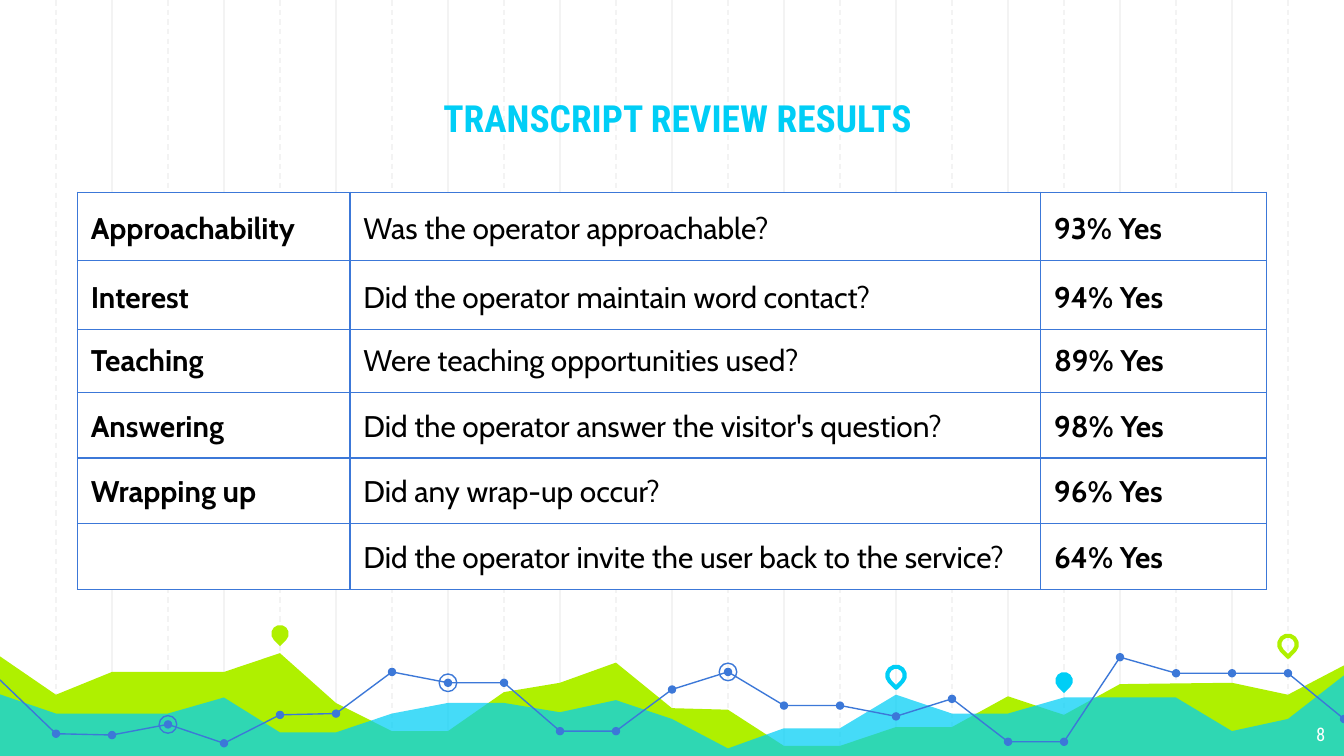
"""Build the transcript review results slide."""
import lxml.etree
import pptx
import pptx.dml.color
import pptx.enum.dml
import pptx.enum.shapes
import pptx.enum.text
import pptx.oxml.ns
import pptx.util

Pt = pptx.util.Pt
qn = pptx.oxml.ns.qn
KIND = pptx.enum.shapes.MSO_SHAPE
ALIGN = pptx.enum.text.PP_ALIGN
ANCHOR = pptx.enum.text.MSO_ANCHOR

LIME, CYAN, BLUE = "AFF000", "00CEF6", "3C78D8"
PALE, WHITE, BLACK = "F3F3F3", "FFFFFF", "000000"
STEP, WIDE, HIGH, BASE = 30, 720, 405, 406.5

TITLE = "TRANSCRIPT REVIEW RESULTS"
PAGE = "8"
ROWS = [
    ("Approachability", "Was the operator approachable?", "93% Yes"),
    ("Interest", "Did the operator maintain word contact?", "94% Yes"),
    ("Teaching", "Were teaching opportunities used?", "89% Yes"),
    ("Answering", "Did the operator answer the visitor's question?", "98% Yes"),
    ("Wrapping up", "Did any wrap-up occur?", "96% Yes"),
    ("", "Did the operator invite the user back to the service?", "64% Yes"),
]
COLS = [146, 370, 121]
TALL = [29.5, 31, 31, 31, 31, 31]
LOOSE = {"line_spacing": 1.15}
PLAIN = {}
SPACED = {"line_spacing": 1.08, "space_after": Pt(8)}
STYLES = [LOOSE, LOOSE, PLAIN, SPACED, SPACED, SPACED]

HILLS = [
    (LIME, None, {
        0: 350.6, 1: 372.2, 2: 360, 4: 360, 5: 349.9, 6: 376.6, 7: 391.7,
        8: 391.7, 9: 370.8, 10: 365.8, 11: 355, 12: 379.4, 13: 380.2,
        14: 399.6, 15: 399.6, 16: 389.5, 17: 389.5, 18: 373, 19: 383,
        20: 366.5, 22: 365.8, 23: 372.2, 24: 355.7}),
    (CYAN, 73, {
        0: 371.5, 1: 382.3, 3: 382.3, 4: 373.7, 5: 392.4, 6: 392.4,
        7: 382.3, 8: 376.6, 9: 376.6, 10: 381.6, 11: 375.1, 12: 385.2,
        13: 401, 14: 390.2, 15: 390.2, 16: 372.2, 17: 382.3, 18: 382.3,
        19: 373.7, 21: 373.7, 22: 391.7, 23: 385.2, 24: 360.7}),
]
TREND = [
    364.3, 393.1, 393.8, 388.1, 398.2, 383, 382.3, 360, 365.8, 365.8, 391.7,
    391.7, 369.4, 360, 378, 378, 383.8, 374.4, 397.4, 397.4, 352.1, 360.7,
    360.7, 360.7, 385.2]
PARTS = [(0, 11), (11, 20), (20, 24)]
RINGS = [3, 8, 13]
PINS = [(5, 339.5, LIME, True), (16, 361.8, CYAN, False),
        (19, 364.7, CYAN, True), (23, 345.2, LIME, False)]


def put(item, values):
    """Set each named value on an item."""
    for name, value in values.items():
        setattr(item, name, value)


def tint(fmt, code):
    """Give a fill or font colour its hex value."""
    if hasattr(fmt, "solid"):
        fmt.solid()
        fmt = fmt.fore_color
    fmt.rgb = pptx.dml.color.RGBColor.from_string(code)


def paint(shape, fill=None, line=None, width=0.75):
    """Set the fill and outline of a shape, without shadow."""
    shape.shadow.inherit = False
    if fill:
        tint(shape.fill, fill)
    else:
        shape.fill.background()
    if line:
        tint(shape.line.fill, line)
        shape.line.width = Pt(width)
    else:
        shape.line.fill.background()


def spot(slide, kind, x, y, size, **look):
    """Add a small shape centred on a point."""
    half = size / 2
    shape = slide.shapes.add_shape(kind, Pt(x - half), Pt(y - half), Pt(size), Pt(size))
    paint(shape, **look)
    return shape


def trace(slide, points, close):
    """Add a freeform through points."""
    dots = [(Pt(x), Pt(y)) for x, y in points]
    pen = slide.shapes.build_freeform(*dots[0], scale=1.0)
    pen.add_line_segments(dots[1:], close=close)
    return pen.convert_to_shape()


def write(para, text, font, size, code, bold=False, style=PLAIN):
    """Fill a paragraph with one formatted run."""
    put(para, style)
    if not text:
        lxml.etree.SubElement(para._p, qn("a:endParaRPr"), sz=str(size * 100))
        return
    run = para.add_run()
    run.text = text
    put(run.font, {"name": font, "size": Pt(size), "bold": bold})
    tint(run.font.color, code)


def edge(cell, code):
    """Draw the four borders of a cell."""
    props = cell._tc.get_or_add_tcPr()
    for spot_no, side in enumerate("LRTB"):
        line = lxml.etree.Element(qn("a:ln" + side), w=str(Pt(0.75)))
        fill = lxml.etree.SubElement(line, qn("a:solidFill"))
        lxml.etree.SubElement(fill, qn("a:srgbClr"), val=code)
        props.insert(spot_no, line)


def grid(slide):
    """Draw the upright guide lines, every other one dashed."""
    for i in range(1, WIDE // STEP):
        x = Pt(i * STEP)
        line = slide.shapes.add_connector(
            pptx.enum.shapes.MSO_CONNECTOR.STRAIGHT, x, 0, x, Pt(BASE))
        tint(line.line.fill, PALE)
        line.line.width = Pt(0.75)
        if i % 2:
            line.line.dash_style = pptx.enum.dml.MSO_LINE.DASH
        lxml.etree.SubElement(line._element.spPr, qn("a:effectLst"))


def scene(slide):
    """Draw the hills, pins and trend line."""
    for code, alpha, tops in HILLS:
        ridge = [(i * STEP, y) for i, y in tops.items()]
        ridge[0], ridge[-1] = (-1.5, ridge[0][1]), (WIDE + 1.5, ridge[-1][1])
        hill = trace(slide, ridge + [(WIDE + 1.5, BASE), (-1.5, BASE)], True)
        paint(hill, fill=code)
        if alpha:
            node = hill._element.spPr.find(".//" + qn("a:srgbClr"))
            lxml.etree.SubElement(node, qn("a:alpha"), val=str(alpha * 1000))
    for i, y, code, full in PINS:
        look = {"fill": code} if full else {"line": code, "width": 2.25}
        spot(slide, KIND.TEAR, i * STEP, y, 9.4, **look).rotation = 135
    path = [(i * STEP, y) for i, y in enumerate(TREND)]
    for a, b in PARTS:
        paint(trace(slide, path[a:b + 1], False), line=BLUE)
    for x, y in path[1:]:
        spot(slide, KIND.OVAL, x, y, 4.5, fill=BLUE)
    for i in RINGS:
        spot(slide, KIND.OVAL, *path[i], 9.4, line=BLUE)


def chart(slide):
    """Add the results table."""
    table = slide.shapes.add_table(
        len(ROWS), len(COLS), Pt(41.5), Pt(103), Pt(sum(COLS)), Pt(sum(TALL))).table
    put(table, {"first_row": False, "horz_banding": False})
    for col, width in zip(table.columns, COLS):
        col.width = Pt(width)
    for row, tall, words, style in zip(table.rows, TALL, ROWS, STYLES):
        row.height = Pt(tall)
        for i, (cell, text) in enumerate(zip(row.cells, words)):
            put(cell, {"margin_" + s: Pt(7.2) for s in ("left", "right", "top", "bottom")})
            tint(cell.fill, WHITE)
            edge(cell, BLUE)
            write(cell.text_frame.paragraphs[0], text, "Cabin", 16, BLACK, i != 1, style)


def label(shape, box, text, size, code, bold, align, anchor):
    """Place a text shape and fill it."""
    put(shape, dict(zip(("left", "top", "width", "height"), map(Pt, box))))
    frame = shape.text_frame
    put(frame, {"margin_" + s: Pt(7.2) for s in ("left", "right", "top", "bottom")})
    put(frame, {"word_wrap": True, "vertical_anchor": anchor,
                "auto_size": pptx.enum.text.MSO_AUTO_SIZE.NONE})
    write(frame.paragraphs[0], text, "Roboto Condensed", size, code, bold,
          {"alignment": align})


def main():
    """Build and save the slide."""
    deck = pptx.Presentation()
    put(deck, {"slide_width": Pt(WIDE), "slide_height": Pt(HIGH)})
    slide = deck.slides.add_slide(deck.slide_layouts[5])
    tint(slide.background.fill, WHITE)
    grid(slide)
    scene(slide)
    label(slide.shapes.add_textbox(0, 0, 0, 0), (674, 380, 43, 25), PAGE, 10,
          WHITE, False, ALIGN.RIGHT, ANCHOR.TOP)
    chart(slide)
    title = slide.shapes.title
    label(title, (20, 26, 686, 56), TITLE, 20, CYAN, True, ALIGN.CENTER, ANCHOR.BOTTOM)
    title._element.getparent().append(title._element)
    deck.save("out.pptx")


if __name__ == "__main__":
    main()
